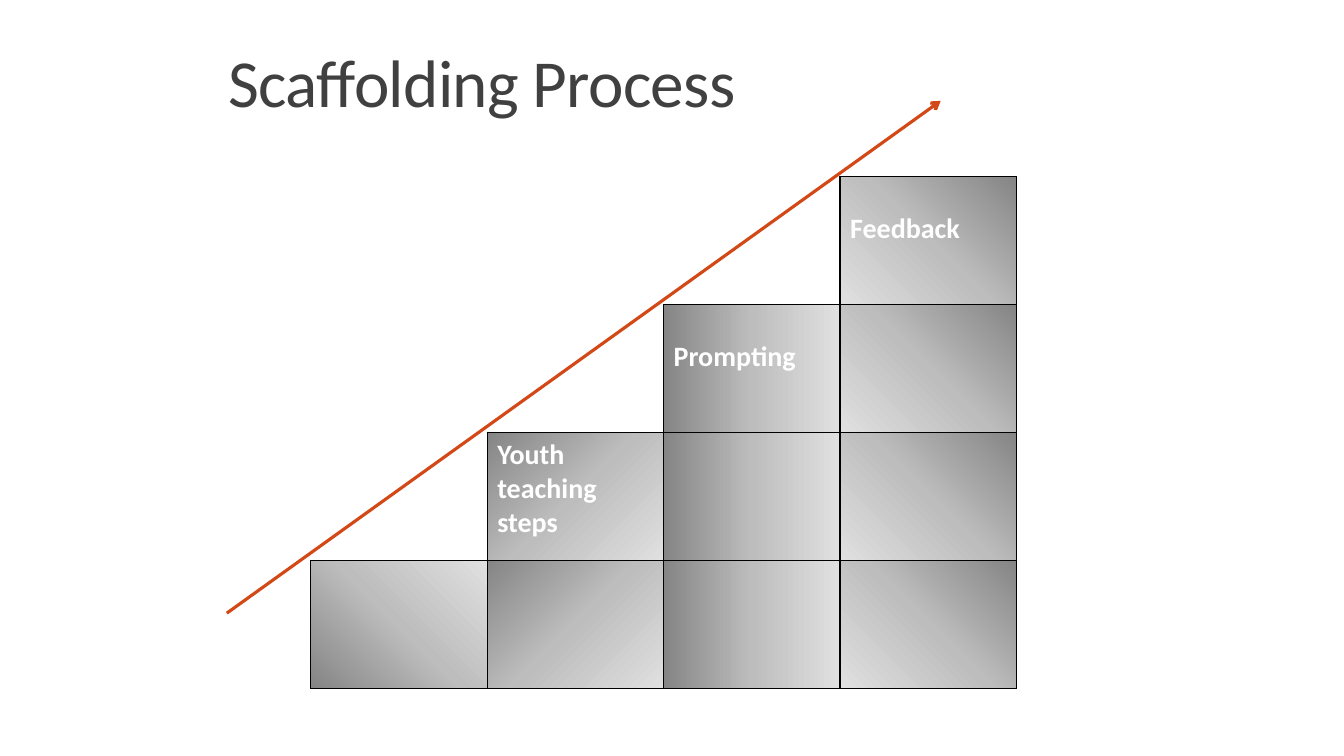
"""Build the Scaffolding Process staircase slide."""
from lxml import etree
from pptx import Presentation
from pptx.dml.color import RGBColor
from pptx.enum import shapes, text
from pptx.oxml import ns
from pptx.util import Pt

TITLE_GREY = RGBColor(0x40, 0x40, 0x40)
WHITE = RGBColor(0xFF, 0xFF, 0xFF)
BLACK = RGBColor(0x00, 0x00, 0x00)
ARROW_ORANGE = RGBColor(0xD3, 0x48, 0x17)
GRADIENT = (
    (0, RGBColor(0x86, 0x85, 0x85)),
    (50, RGBColor(0xBE, 0xBD, 0xBD)),
    (100, RGBColor(0xE1, 0xE0, 0xE0)),
)

STEP_WIDTH, STEP_HEIGHT = 126, 91.44
STAIRS_LEFT, STAIRS_BOTTOM = 222, 491.76
LABEL_OFFSET = 25.6
CELL_MARGIN = 3.6

# Lines of the label, top margin and gradient angle (None is radial), left to right.
STEPS = (
    ((), CELL_MARGIN, None),
    (("Youth teaching", "steps"), CELL_MARGIN, 45),
    (("Prompting",), LABEL_OFFSET, 0),
    (("Feedback",), LABEL_OFFSET, 135),
)


def add_element(parent, tag, **attributes):
    """Append a DrawingML element with the given attributes."""
    element = etree.SubElement(parent, ns.qn(tag))
    for name, value in attributes.items():
        element.set(name, str(value))
    return element


def write_text(frame, lines, size, color, bold=False, line_spacing=None, tracking=None):
    """Write one formatted paragraph per line into a text frame."""
    for index, line in enumerate(lines):
        paragraph = frame.add_paragraph() if index else frame.paragraphs[0]
        if line_spacing:
            paragraph.line_spacing = line_spacing
        run = paragraph.add_run()
        run.text = line
        run.font.name = "Calibri"
        run.font.size = Pt(size)
        run.font.bold = bold
        run.font.color.rgb = color
        if tracking:
            run.font._element.set("spc", str(int(tracking * 100)))


def add_title(slide, title):
    """Add the slide title, resting on the bottom of its box."""
    box = slide.shapes.add_textbox(Pt(156), Pt(21.6), Pt(648), Pt(68.4))
    frame = box.text_frame
    frame.word_wrap = True
    frame.vertical_anchor = text.MSO_ANCHOR.BOTTOM
    write_text(frame, [title], size=48, color=TITLE_GREY, line_spacing=0.85, tracking=-0.5)


def style_cell(cell, angle):
    """Give a cell thin black borders and the grey gradient."""
    properties = cell._tc.get_or_add_tcPr()
    for side in ("a:lnL", "a:lnR", "a:lnT", "a:lnB"):
        border = add_element(properties, side, w=Pt(1))
        add_element(add_element(border, "a:solidFill"), "a:srgbClr", val=BLACK)
    gradient = add_element(properties, "a:gradFill", rotWithShape=1)
    stops = add_element(gradient, "a:gsLst")
    for position, color in GRADIENT:
        stop = add_element(stops, "a:gs", pos=position * 1000)
        add_element(stop, "a:srgbClr", val=color)
    if angle is None:
        radial = add_element(gradient, "a:path", path="circle")
        add_element(radial, "a:fillToRect", t=100000, r=100000)
    else:
        add_element(gradient, "a:lin", ang=angle * 60000, scaled=1)


def add_step(slide, index, lines, margin_top, angle):
    """Add one column of the staircase, one block higher than the last."""
    blocks = index + 1
    height = blocks * STEP_HEIGHT
    frame = slide.shapes.add_table(
        blocks, 1, Pt(STAIRS_LEFT + index * STEP_WIDTH), Pt(STAIRS_BOTTOM - height),
        Pt(STEP_WIDTH), Pt(height))
    table = frame.table
    table.first_row = False
    table.horz_banding = False
    for row in table.rows:
        row.height = Pt(STEP_HEIGHT)
        style_cell(row.cells[0], angle)
    top_cell = table.cell(0, 0)
    top_cell.margin_top = Pt(margin_top)
    write_text(top_cell.text_frame, lines, size=20, color=WHITE, bold=True)


def add_arrow(slide, start, end):
    """Add the rising arrow along the stairs."""
    points = [Pt(value) for value in (*start, *end)]
    arrow = slide.shapes.add_connector(shapes.MSO_CONNECTOR.STRAIGHT, *points)
    arrow.line.color.rgb = ARROW_ORANGE
    arrow.line.width = Pt(2.25)
    add_element(arrow.line._get_or_add_ln(), "a:tailEnd", type="arrow")
    add_element(arrow._element.spPr, "a:effectLst")


def main():
    """Build and save the slide."""
    presentation = Presentation()
    presentation.slide_width, presentation.slide_height = Pt(960), Pt(540)
    slide = presentation.slides.add_slide(presentation.slide_layouts[6])
    add_title(slide, "Scaffolding Process")
    for index, (lines, margin_top, angle) in reversed(list(enumerate(STEPS))):
        add_step(slide, index, lines, margin_top, angle)
    add_arrow(slide, start=(162, 438), end=(672, 72))
    presentation.save("out.pptx")


if __name__ == "__main__":
    main()
